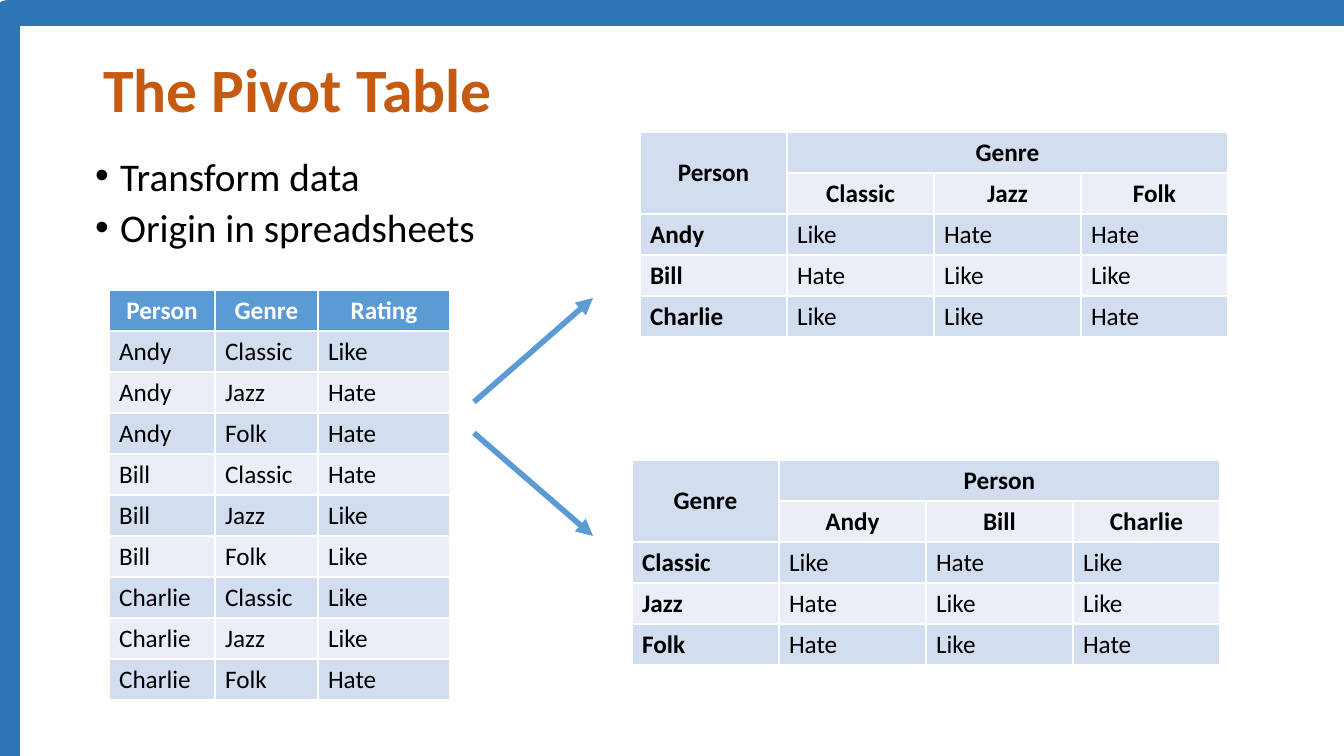
from lxml.etree import SubElement
from pptx import Presentation
from pptx.dml.color import RGBColor
from pptx.enum.shapes import MSO_CONNECTOR as Connector, MSO_SHAPE as Shape
from pptx.enum.text import MSO_ANCHOR as Anchor, MSO_AUTO_SIZE as AutoSize, PP_ALIGN as Align
from pptx.oxml.ns import qn
from pptx.util import Pt

TITLE = "The Pivot Table"
BULLETS = ["Transform data", "Origin in spreadsheets"]
FIELDS = ("Person", "Genre", "Rating")
PEOPLE = ("Andy", "Bill", "Charlie")
GENRES = ("Classic", "Jazz", "Folk")
RATINGS = [
    ("Andy", "Classic", "Like"),
    ("Andy", "Jazz", "Hate"),
    ("Andy", "Folk", "Hate"),
    ("Bill", "Classic", "Hate"),
    ("Bill", "Jazz", "Like"),
    ("Bill", "Folk", "Like"),
    ("Charlie", "Classic", "Like"),
    ("Charlie", "Jazz", "Like"),
    ("Charlie", "Folk", "Hate"),
]

# Lengths in px
SLIDE = (1344, 756)
FRAME_AT = (7, 13, 1350, 761)
TITLE_AT = (93, 40, 1159, 105)
BULLETS_AT = (85, 156, 436, 103)
RATINGS_AT = (109, 290)
RATINGS_COLUMNS = (106, 103, 132)
BY_PERSON_AT = (640, 132)
BY_GENRE_AT = (632, 460)
PIVOT_COLUMNS = (147,) * 4
ROW_HEIGHT = 41
ARROWS = [(474, 402, 593, 298), (474, 433, 593, 536)]
BULLET_INDENT = 25

FONT = "Calibri"
BLACK, WHITE, ORANGE = "000000", "FFFFFF", "C55A11"
FRAME_BLUE, HEADER_BLUE = "2E75B6", "5B9BD5"
BANDS = ("D2DEEF", "EAEFF7")


def px(length):
    return round(length * 914400 / 100.8)


def rgb(color):
    return RGBColor.from_string(color)


def place(shape, box):
    shape.left, shape.top, shape.width, shape.height = map(px, box)


def add_run(paragraph, text, size, color=BLACK, bold=False):
    run = paragraph.add_run()
    run.text = text
    run.font.name, run.font.size, run.font.bold = FONT, Pt(size), bold
    run.font.color.rgb = rgb(color)


def add_grid(slide, at, columns, row_count, has_header):
    box = (*at, sum(columns), row_count * ROW_HEIGHT)
    table = slide.shapes.add_table(row_count, len(columns), *map(px, box)).table
    table.first_row = has_header
    for column, width in zip(table.columns, columns):
        column.width = px(width)
    return table


def fill_cell(cell, text, fill, color=BLACK, bold=False, centered=False):
    cell.fill.solid()
    cell.fill.fore_color.rgb = rgb(fill)
    paragraph = cell.text_frame.paragraphs[0]
    if centered:
        paragraph.alignment = Align.CENTER
    if text:
        add_run(paragraph, text, 18, color, bold)


def add_ratings(slide):
    table = add_grid(slide, RATINGS_AT, RATINGS_COLUMNS, len(RATINGS) + 1, True)
    for c, field in enumerate(FIELDS):
        fill_cell(table.cell(0, c), field, HEADER_BLUE, WHITE, True, True)
    for r, record in enumerate(RATINGS):
        for c, value in enumerate(record):
            fill_cell(table.cell(r + 1, c), value, BANDS[r % 2])


def add_pivot(slide, at, row_field, row_names, column_field, column_names):
    """Spread the ratings over one field's rows and another's columns."""
    row_index, column_index = FIELDS.index(row_field), FIELDS.index(column_field)
    rating = {(rec[row_index], rec[column_index]): rec[-1] for rec in RATINGS}
    rows = [(row_field, column_field, "", ""), ("", *column_names)]
    rows += [(name, *(rating[name, other] for other in column_names)) for name in row_names]

    table = add_grid(slide, at, PIVOT_COLUMNS, len(rows), False)
    table.cell(0, 0).merge(table.cell(1, 0))
    table.cell(0, 1).merge(table.cell(0, len(column_names)))
    table.cell(0, 0).vertical_anchor = Anchor.MIDDLE
    for r, row in enumerate(rows):
        for c, value in enumerate(row):
            heading = r < 2
            fill_cell(table.cell(r, c), value, BANDS[r % 2],
                      bold=heading or c == 0, centered=heading)


def add_arrow(slide, ends):
    arrow = slide.shapes.add_connector(Connector.STRAIGHT, *map(px, ends))
    arrow.line.color.rgb = rgb(HEADER_BLUE)
    arrow.line.width = Pt(4)
    SubElement(arrow.line._get_or_add_ln(), qn("a:tailEnd"), type="triangle")
    SubElement(arrow._element.spPr, qn("a:effectLst"))


def add_frame(slide):
    frame = slide.shapes.add_shape(Shape.RECTANGLE, *map(px, FRAME_AT))
    frame.shadow.inherit = False
    frame.fill.background()
    frame.line.color.rgb = rgb(FRAME_BLUE)
    frame.line.width = Pt(18)
    slide.shapes._spTree.insert(2, frame._element)  # behind everything else


def write_title(title):
    place(title, TITLE_AT)
    title.text_frame.auto_size = AutoSize.NONE
    title.text_frame.vertical_anchor = Anchor.MIDDLE
    heading = title.text_frame.paragraphs[0]
    heading.alignment = Align.LEFT
    heading.line_spacing = 0.9
    add_run(heading, TITLE, 44, ORANGE, True)


def write_bullets(body):
    place(body, BULLETS_AT)
    frame = body.text_frame
    frame.auto_size = AutoSize.NONE
    for i, text in enumerate(BULLETS):
        point = frame.add_paragraph() if i else frame.paragraphs[0]
        point.line_spacing = 0.8
        point.space_before = Pt(10)
        properties = point._p.get_or_add_pPr()
        properties.set("marL", str(px(BULLET_INDENT)))
        properties.set("indent", str(-px(BULLET_INDENT)))
        SubElement(properties, qn("a:buFont"), typeface="Arial")
        SubElement(properties, qn("a:buChar"), char="•")
        add_run(point, text, 28)


def main():
    deck = Presentation()
    deck.slide_width, deck.slide_height = map(px, SLIDE)
    slide = deck.slides.add_slide(deck.slide_layouts[1])
    add_frame(slide)
    write_title(slide.shapes.title)
    write_bullets(slide.placeholders[1])
    add_ratings(slide)
    add_pivot(slide, BY_PERSON_AT, "Person", PEOPLE, "Genre", GENRES)
    add_pivot(slide, BY_GENRE_AT, "Genre", GENRES, "Person", PEOPLE)
    for ends in ARROWS:
        add_arrow(slide, ends)
    deck.save("out.pptx")


if __name__ == "__main__":
    main()
